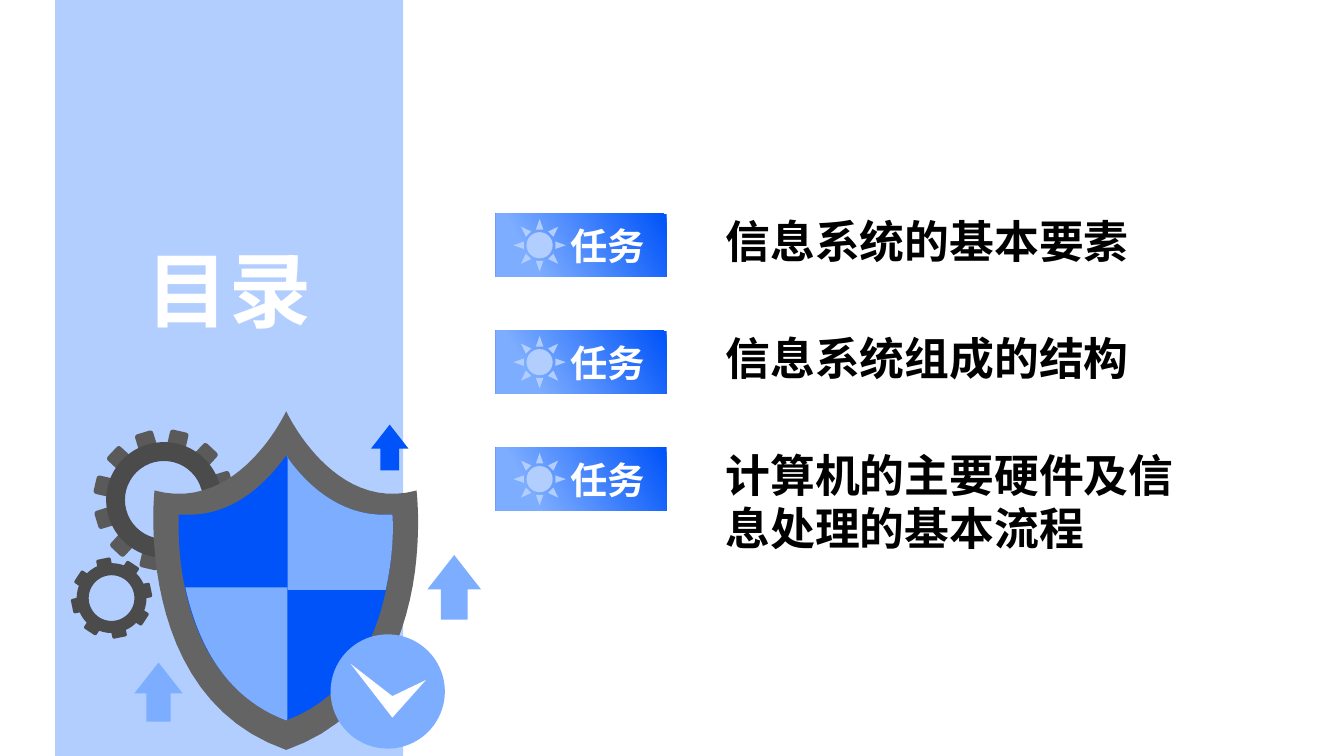
import math

import lxml.etree
import pptx
import pptx.dml.color
import pptx.enum.shapes
import pptx.enum.text
import pptx.oxml.ns
import pptx.util

Inches = pptx.util.Inches
SHAPE = pptx.enum.shapes.MSO_SHAPE
ALIGN = pptx.enum.text.PP_ALIGN
CJK = "Noto Sans CJK SC"
WIDTH = 10
HEIGHT = WIDTH * 9 / 16

COLORS = {
    "pale": "B1CEFF",
    "light": "7DADFF",
    "blue": "0053F9",
    "tooth": "5A5A5A",
    "far_tooth": "AEBFCE",
    "gear": "4B4B4B",
    "shield": "646464",
    "white": "FFFFFF",
    "black": "000000",
}

SHIELD_RIM = [
    [(2.6, 0.65)],
    [(1.98, 0.82), (1.63, 0.06), (1.63, 0.06)],
    [(1.63, 0.06), (1.28, 0.82), (0.65, 0.65)],
    [(0.65, 0.65), (0.48, 2.18), (1.63, 2.58)],
    [(2.79, 2.18), (2.6, 0.65), (2.6, 0.65)],
]
SHIELD_FACE = [
    [(1.63, 2.36)],
    [(0.87, 2.06), (0.82, 1.17), (0.83, 0.83)],
    [(0.91, 0.83)],
    [(1.26, 0.83), (1.5, 0.57), (1.63, 0.39)],
    [(1.75, 0.57), (1.99, 0.83), (2.35, 0.83)],
    [(2.42, 0.83)],
    [(2.43, 1.17), (2.38, 2.08), (1.63, 2.36)],
]
LOWER_LEFT = [
    [(1.64, 1.37)],
    [(0.88, 1.37)],
    [(0.96, 1.74), (1.15, 2.18), (1.63, 2.36)],
    [(1.64, 2.35)],
]
UPPER_RIGHT = [
    [(2.35, 0.83)],
    [(2.42, 0.83)],
    [(2.43, 0.96), (2.42, 1.16), (2.37, 1.39)],
    [(1.64, 1.39)],
    [(1.64, 0.4)],
    [(1.63, 0.39)],
    [(1.75, 0.57), (2, 0.83), (2.35, 0.83)],
]
CHECK = [[(2.11, 1.94)], [(2.42, 2.34)], [(2.67, 2.06)], [(2.42, 2.18)]]

TASKS = [
    ["信息系统的基本要素"],
    ["信息系统组成的结构"],
    ["计算机的主要硬件及信", "息处理的基本流程"],
]


def rgb(color):
    return pptx.dml.color.RGBColor.from_string(COLORS[color])


def paint(sp, color):
    sp.shadow.inherit = False
    sp.fill.solid()
    sp.fill.fore_color.rgb = rgb(color)
    sp.line.fill.background()
    return sp


def add_shape(s, kind, x, y, w, h, color):
    sp = s.shapes.add_shape(kind, Inches(x), Inches(y), Inches(w), Inches(h))
    return paint(sp, color)


def add_text(s, x, y, w, h, lines, size, font, color, align=ALIGN.LEFT):
    tf = s.shapes.add_textbox(Inches(x), Inches(y), Inches(w), Inches(h)).text_frame
    tf.word_wrap = True
    tf.text = "\n".join(lines)
    for p in tf.paragraphs:
        p.alignment = align
        p.line_spacing = pptx.util.Pt(size * 1.2)
        p.font.size = pptx.util.Pt(size)
        p.font.bold = True
        p.font.color.rgb = rgb(color)
        p.font.name = font
        props = p._p.pPr.find(pptx.oxml.ns.qn("a:defRPr"))
        lxml.etree.SubElement(props, pptx.oxml.ns.qn("a:ea")).set("typeface", CJK)


def flatten(segments, steps=24):
    points = list(segments[0])
    for segment in segments[1:]:
        if len(segment) == 1:
            points += segment
            continue
        curve = [points[-1]] + segment
        for i in range(1, steps + 1):
            t = i / steps
            weights = [math.comb(3, k) * t**k * (1 - t) ** (3 - k) for k in range(4)]
            points.append(tuple(
                sum(wt * pt[axis] for wt, pt in zip(weights, curve)) for axis in (0, 1)
            ))
    return points


def add_outline(s, x, y, segments, color):
    points = [(Inches(x + px), Inches(y + py)) for px, py in flatten(segments)]
    fb = s.shapes.build_freeform(*points[0], scale=1.0)
    fb.add_line_segments(points[1:], close=True)
    paint(fb.convert_to_shape(), color)


def add_gear(s, cx, cy, outer, inner, reach, tooth, angle, tooth_colors):
    w, h = tooth
    step = 360 / len(tooth_colors)
    for i, color in enumerate(tooth_colors):
        turn = angle + i * step
        tx = cx + reach * math.cos(math.radians(turn))
        ty = cy + reach * math.sin(math.radians(turn))
        sp = add_shape(s, SHAPE.ROUNDED_RECTANGLE, tx - w / 2, ty - h / 2, w, h, color)
        sp.rotation = turn + 90
    ring = add_shape(s, SHAPE.DONUT, cx - outer, cy - outer, 2 * outer, 2 * outer, "gear")
    ring.adjustments[0] = (outer - inner) / (2 * outer)


def add_illustration(s, x, y):
    big_teeth = ["tooth"] * 3 + ["far_tooth"] * 3 + ["tooth"] * 6
    add_gear(s, x + 0.72, y + 0.72, 0.43, 0.29, 0.46, (0.14, 0.13), -77, big_teeth)
    add_gear(s, x + 0.33, y + 1.45, 0.26, 0.17, 0.26, (0.11, 0.08), -57, ["gear"] * 8)
    add_outline(s, x, y, SHIELD_RIM, "shield")
    add_outline(s, x, y, SHIELD_FACE, "blue")
    add_outline(s, x, y, LOWER_LEFT, "light")
    add_outline(s, x, y, UPPER_RIGHT, "light")
    add_shape(s, SHAPE.OVAL, x + 1.96, y + 1.72, 0.85, 0.85, "light")
    add_outline(s, x, y, CHECK, "white")
    for ax, ay, w, h, color in [
        (2.68, 1.13, 0.4, 0.48, "light"),
        (2.26, 0.16, 0.28, 0.34, "blue"),
        (0.5, 1.93, 0.36, 0.44, "light"),
    ]:
        arrow = add_shape(s, SHAPE.UP_ARROW, x + ax, y + ay, w, h, color)
        arrow.adjustments[0] = 0.5
        arrow.adjustments[1] = 0.64


def add_title_panel(s, x, y, w, h):
    add_shape(s, SHAPE.RECTANGLE, x, y, w, h, "pale")
    add_text(s, x, y + 1.73, w, 0.84, ["目录"], 44, "Arial", "white", ALIGN.CENTER)


def add_task(s, x, y, lines):
    badge = add_shape(s, SHAPE.RECTANGLE, x, y, 1.27, 0.47, "blue")
    badge.fill.gradient()
    badge.fill.gradient_angle = 210
    for stop, position, color in zip(badge.fill.gradient_stops, (0, 0.79), ("blue", "light")):
        stop.position = position
        stop.color.rgb = rgb(color)
    add_text(s, x + 0.06, y + 0.02, 1.15, 0.44, ["任务"], 20, CJK, "white", ALIGN.RIGHT)
    add_text(s, x + 1.61, y - 0.05, 3.6, 0.1 + 0.4 * len(lines), lines, 24, "Arial", "black")
    sun = add_shape(s, SHAPE.SUN, x + 0.13, y + 0.04, 0.39, 0.39, "pale")
    sun.rotation = 45


def main():
    prs = pptx.Presentation()
    prs.slide_width = Inches(WIDTH)
    prs.slide_height = Inches(HEIGHT)
    s = prs.slides.add_slide(prs.slide_layouts[6])
    add_title_panel(s, 0.41, 0, 2.59, HEIGHT)
    add_illustration(s, 0.5, 3)
    for i, lines in enumerate(TASKS):
        add_task(s, 3.69, 1.59 + i * 0.87, lines)
    prs.save("out.pptx")


if __name__ == "__main__":
    main()
